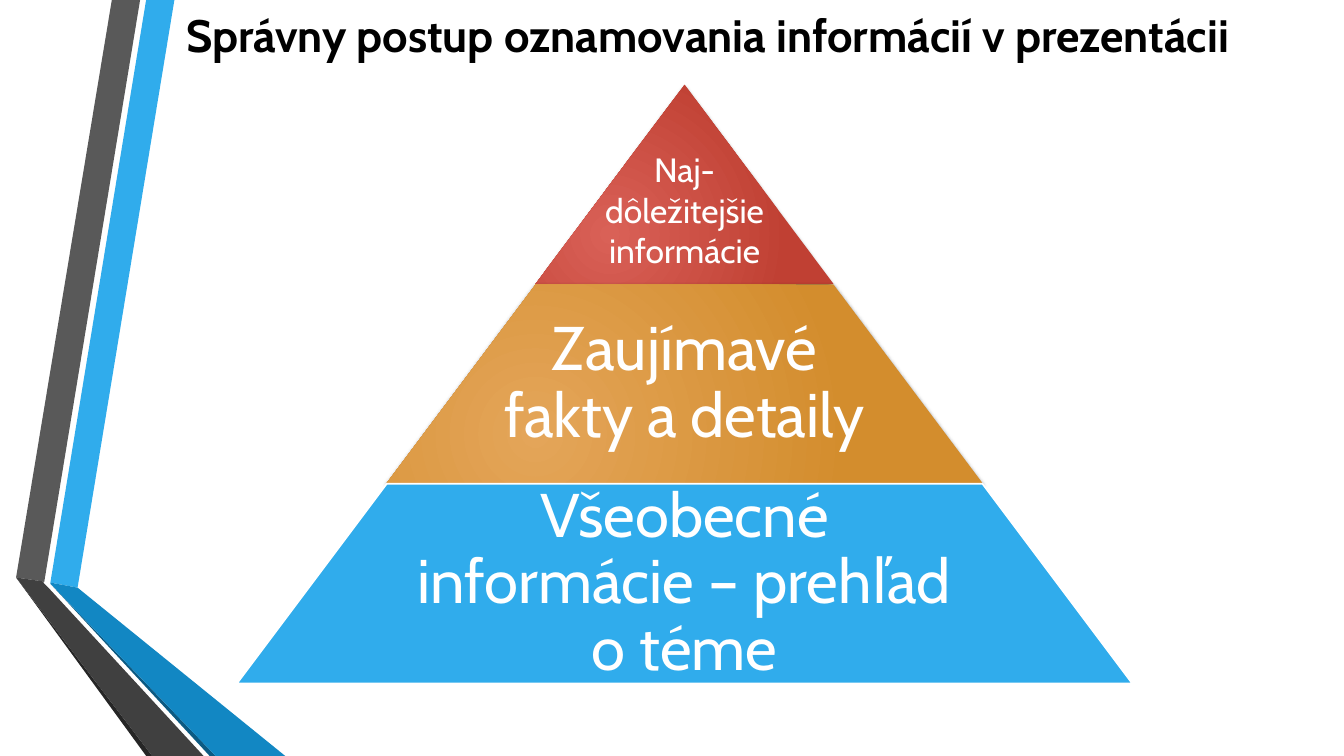
from pptx import Presentation
from pptx.dml.color import RGBColor
from pptx.enum.shapes import MSO_SHAPE
from pptx.enum.text import MSO_ANCHOR, MSO_AUTO_SIZE, PP_ALIGN
from pptx.oxml import parse_xml
from pptx.oxml.ns import nsdecls, qn
from pptx.util import Inches, Pt

FONT = "Cabin"
BLACK = RGBColor(0x00, 0x00, 0x00)
WHITE = RGBColor(0xFF, 0xFF, 0xFF)
BLUE = RGBColor(0x30, 0xAC, 0xEC)
MID_BLUE = RGBColor(0x12, 0x87, 0xC3)
DARK_BLUE = RGBColor(0x0C, 0x5A, 0x82)
GREY = RGBColor(0x59, 0x59, 0x59)
DARK_GREY = RGBColor(0x40, 0x40, 0x40)
NEAR_BLACK = RGBColor(0x26, 0x26, 0x26)
RED = (RGBColor(0xD9, 0x61, 0x57), RGBColor(0xC0, 0x40, 0x33))
ORANGE = (RGBColor(0xE4, 0xA5, 0x59), RGBColor(0xD3, 0x8D, 0x2D))

# Content
TITLE = "Správny postup oznamovania informácií v prezentácii"

# Tiers from the top: paragraphs, size, line spacing, text width share,
# inset, extra top inset, colours (inner and outer, or one plain)
TIERS = [
    (["Naj-", "dôležitejšie informácie"], 24, 1.0, 1.0, 0.03, 0.5, RED),
    (["Zaujímavé fakty a detaily"], 44, 0.9, 0.65, 0.06, 0, ORANGE),
    (["Všeobecné informácie – prehľad o téme"], 44, 0.9, 0.65, 0.06, 0, (BLUE,)),
]

# Folded ribbons on the left, from back to front
RIBBONS = [
    (BLUE, [(0.5, 5.78), (0.77, 5.83), (1.73, 0), (1.45, 0)]),
    (GREY, [(1.39, 0), (1.11, 0), (0.16, 5.73), (0.44, 5.77)]),
    (NEAR_BLACK, [(0.16, 5.73), (1.45, 7.5), (1.51, 7.5)]),
    (DARK_BLUE, [(0.5, 5.79), (2.08, 7.5), (2.14, 7.5)]),
    (MID_BLUE, [(0.5, 5.79), (2.14, 7.5), (2.83, 7.5), (0.77, 5.83), (0.5, 5.78)]),
    (DARK_GREY, [(2.02, 7.5), (0.48, 5.83), (0.43, 5.78), (0.44, 5.77),
                 (0.16, 5.73), (1.51, 7.5)]),
]

# Pyramid geometry
CENTER_X, PYRAMID_TOP = 6.79, 0.84
TIER_HEIGHT, TIER_STEP = 1.98, 2.96
SLOPE = 0.75


def add_run(paragraph, text, size, color, bold=False):
    run = paragraph.add_run()
    run.text = text
    run.font.name = FONT
    run.font.size = Pt(size)
    run.font.bold = bold
    run.font.color.rgb = color


def add_ribbon(slide, color, points):
    corners = [(Inches(x), Inches(y)) for x, y in points]
    builder = slide.shapes.build_freeform(*corners[0])
    builder.add_line_segments(corners[1:], close=True)
    shape = builder.convert_to_shape()
    shape.shadow.inherit = False
    shape.fill.solid()
    shape.fill.fore_color.rgb = color
    shape.line.fill.background()


def fill_radial(shape, colors):
    """Radial gradient centred low on the left, with a soft shadow below."""
    shape.fill.gradient()
    for stop, color in zip(shape.fill.gradient_stops, colors):
        stop.color.rgb = color
    properties = shape._element.spPr
    gradient = properties.find(qn("a:gradFill"))
    gradient.replace(gradient.find(qn("a:lin")), parse_xml(
        f'<a:path {nsdecls("a")} path="circle">'
        '<a:fillToRect l="50000" t="100000" r="100000" b="50000"/></a:path>'))
    properties.find(qn("a:effectLst")).append(parse_xml(
        f'<a:outerShdw {nsdecls("a")} blurRad="{Pt(3)}" dist="{Pt(2)}" '
        'dir="5400000" algn="ctr" rotWithShape="0">'
        '<a:srgbClr val="000000"><a:alpha val="64000"/></a:srgbClr></a:outerShdw>'))


def add_tier(slide, index, tier):
    paragraphs, size, spacing, share, inset, extra_top, colors = tier
    width = TIER_STEP * (index + 1)
    top = Inches(PYRAMID_TOP + index * TIER_HEIGHT)
    height = Inches(TIER_HEIGHT)

    shape = slide.shapes.add_shape(
        MSO_SHAPE.TRAPEZOID, Inches(CENTER_X - width / 2), top, Inches(width), height)
    shape.adjustments[0] = SLOPE
    shape.shadow.inherit = False
    if len(colors) == 2:
        shape.line.fill.background()
        fill_radial(shape, colors)
    else:
        shape.fill.solid()
        shape.fill.fore_color.rgb = colors[0]
        shape.line.color.rgb = WHITE
        shape.line.width = Pt(1.25)

    text_width = width * share
    box = slide.shapes.add_textbox(
        Inches(CENTER_X - text_width / 2), top, Inches(text_width), height)
    frame = box.text_frame
    frame.word_wrap = True
    frame.vertical_anchor = MSO_ANCHOR.MIDDLE
    frame.margin_left = frame.margin_right = frame.margin_bottom = Inches(inset)
    frame.margin_top = Inches(inset + extra_top)
    for number, text in enumerate(paragraphs):
        paragraph = frame.add_paragraph() if number else frame.paragraphs[0]
        paragraph.alignment = PP_ALIGN.CENTER
        paragraph.line_spacing = spacing
        add_run(paragraph, text, size, WHITE)


def main():
    presentation = Presentation()
    presentation.slide_width = Inches(13.33)
    presentation.slide_height = Inches(7.5)
    slide = presentation.slides.add_slide(presentation.slide_layouts[5])

    # Ribbons
    for color, points in RIBBONS:
        add_ribbon(slide, color, points)

    # Title
    title = slide.shapes.title
    title.left, title.top = Inches(1.54), Inches(-0.15)
    title.width, title.height = Inches(10.96), Inches(0.98)
    frame = title.text_frame
    frame.word_wrap = True
    frame.auto_size = MSO_AUTO_SIZE.NONE
    frame.vertical_anchor = MSO_ANCHOR.MIDDLE
    frame.paragraphs[0].alignment = PP_ALIGN.CENTER
    add_run(frame.paragraphs[0], TITLE, 32.4, BLACK, bold=True)

    # Pyramid
    for index, tier in enumerate(TIERS):
        add_tier(slide, index, tier)

    presentation.save("out.pptx")


if __name__ == "__main__":
    main()
